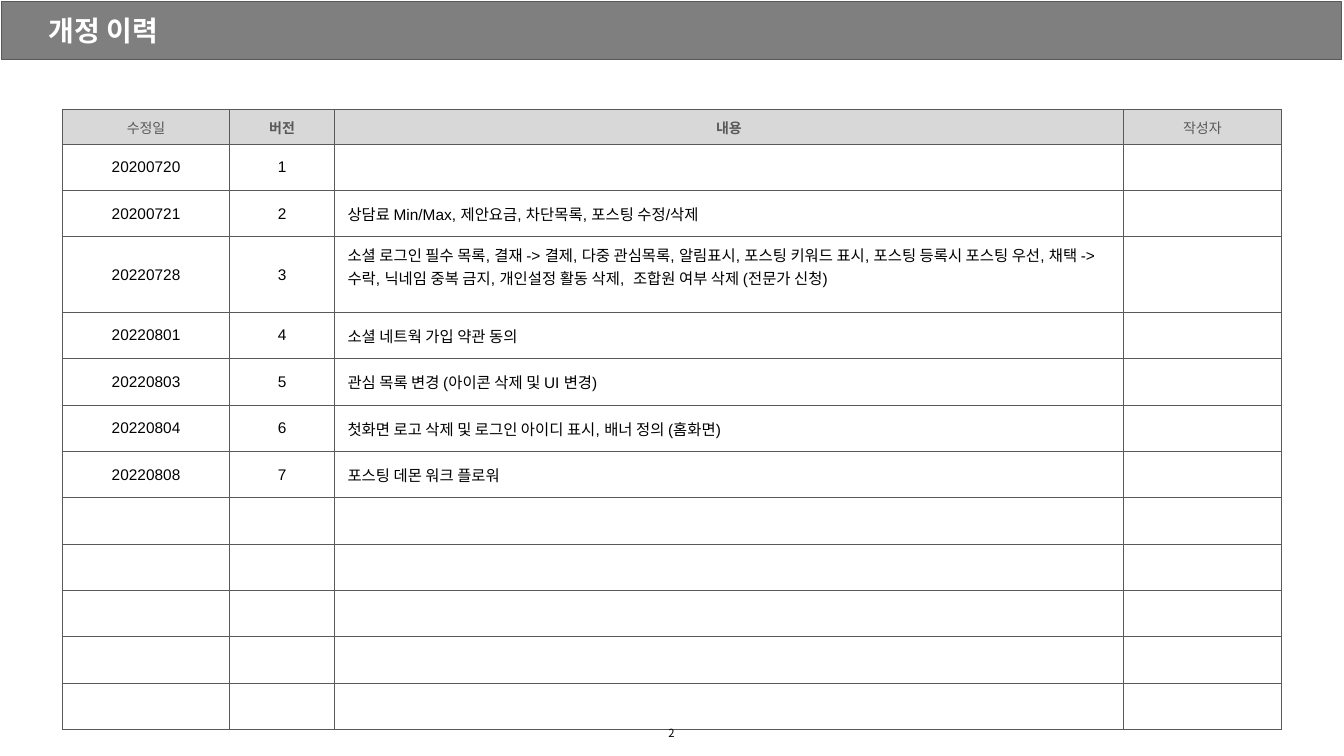
from lxml.etree import SubElement
from pptx import Presentation
from pptx.dml.color import RGBColor
from pptx.enum.shapes import MSO_SHAPE as Shape
from pptx.enum.text import MSO_ANCHOR as Anchor, MSO_AUTO_SIZE as AutoSize, PP_ALIGN as Align
from pptx.oxml.ns import qn
from pptx.util import Inches, Pt

LATIN, KOREAN = "Arial", "Noto Sans CJK KR"
GREY, DARK, LIGHT = "7F7F7F", "595959", "D8D8D8"
BLACK, WHITE = "000000", "FFFFFF"

HEADERS = [("수정일", False), ("버전", True), ("내용", True), ("작성자", False)]
REVISIONS = [
    ("20200720", ""),
    ("20200721", "상담료 Min/Max, 제안요금, 차단목록, 포스팅 수정/삭제"),
    ("20220728", "소셜 로그인 필수 목록, 결재 -> 결제, 다중 관심목록, 알림표시, "
                 "포스팅 키워드 표시, 포스팅 등록시 포스팅 우선, 채택 -> 수락, "
                 "닉네임 중복 금지, 개인설정 활동 삭제,  조합원 여부 삭제 (전문가 신청)"),
    ("20220801", "소셜 네트웍 가입 약관 동의"),
    ("20220803", "관심 목록 변경 (아이콘 삭제 및 UI 변경)"),
    ("20220804", "첫화면 로고 삭제 및 로그인 아이디 표시, 배너 정의 (홈화면)"),
    ("20220808", "포스팅 데몬 워크 플로워"),
]
EMPTY_ROWS = 5
LONG_ROW = 3
COLUMN_WIDTHS = [1.66, 1.04, 7.83, 1.57]
HEADER_HEIGHT, ROW_HEIGHT, LONG_HEIGHT = 0.32, 0.46, 0.75


def color(value):
    return RGBColor.from_string(value)


class SlideBuilder:
    def __init__(self, slide):
        self.slide = slide

    def add_run(self, paragraph, text, size, ink, bold=False, latin=KOREAN):
        run = paragraph.add_run()
        run.text = text
        font = run.font
        font.size, font.bold, font.name = Pt(size), bold, latin
        font.color.rgb = color(ink)
        SubElement(run._r.get_or_add_rPr(), qn("a:ea"), typeface=KOREAN)

    def banner(self, left, top, width, height):
        shape = self.slide.shapes.add_shape(
            Shape.RECTANGLE, Inches(left), Inches(top), Inches(width), Inches(height))
        shape.shadow.inherit = False
        shape.fill.solid()
        shape.fill.fore_color.rgb = color(GREY)
        shape.line.color.rgb = color(DARK)
        shape.line.width = Pt(0.75)
        # The banner lies behind the title
        self.slide.shapes.title.element.addprevious(shape.element)

    def text(self, shape, box, text, size, ink, align, insets, bold=False):
        shape.left, shape.top, shape.width, shape.height = map(Inches, box)
        frame = shape.text_frame
        frame.word_wrap = True
        frame.auto_size = AutoSize.NONE
        frame.vertical_anchor = Anchor.MIDDLE
        (frame.margin_left, frame.margin_top,
         frame.margin_right, frame.margin_bottom) = map(Inches, insets)
        paragraph = frame.paragraphs[0]
        paragraph.alignment = align
        self.add_run(paragraph, text, size, ink, bold)

    def table(self, left, top, widths, heights):
        frame = self.slide.shapes.add_table(
            len(heights), len(widths), Inches(left), Inches(top),
            Inches(sum(widths)), Inches(sum(heights)))
        table = frame.table
        table.first_row = table.horz_banding = False
        for column, width in zip(table.columns, widths):
            column.width = Inches(width)
        for row, height in zip(table.rows, heights):
            row.height = Inches(height)
        return table

    def cell(self, cell, text, size, ink, fill, align, bold=False, anchor=Anchor.MIDDLE):
        cell.margin_left = cell.margin_right = Inches(0.13)
        cell.margin_top = cell.margin_bottom = Inches(0.07)
        cell.vertical_anchor = anchor
        properties = cell._tc.get_or_add_tcPr()
        for side in ("lnL", "lnR", "lnT", "lnB"):
            border = SubElement(properties, qn(f"a:{side}"), w=str(Pt(0.75)))
            SubElement(SubElement(border, qn("a:solidFill")), qn("a:srgbClr"), val=DARK)
        cell.fill.solid()
        cell.fill.fore_color.rgb = color(fill)
        if text:
            paragraph = cell.text_frame.paragraphs[0]
            paragraph.alignment = align
            self.add_run(paragraph, text, size, ink, bold, LATIN)


def main():
    presentation = Presentation()
    presentation.slide_width, presentation.slide_height = Inches(13.34), Inches(7.5)
    slide = presentation.slides.add_slide(presentation.slide_layouts[5])
    builder = SlideBuilder(slide)

    # Title bar
    builder.banner(0.02, 0.02, 13.3, 0.57)
    builder.text(slide.shapes.title, (0.29, 0, 12.76, 0.6), "개정 이력", 20, WHITE,
                 Align.LEFT, (0.19, 0.06, 0.11, 0.06), bold=True)

    # Revision table
    rows = [(date, str(version), note, "")
            for version, (date, note) in enumerate(REVISIONS, 1)]
    rows += [("",) * len(HEADERS)] * EMPTY_ROWS
    heights = [HEADER_HEIGHT] + [ROW_HEIGHT] * len(rows)
    heights[LONG_ROW] = LONG_HEIGHT
    table = builder.table(0.62, 1.09, COLUMN_WIDTHS, heights)
    for column, (label, bold) in enumerate(HEADERS):
        builder.cell(table.cell(0, column), label, 10, DARK, LIGHT, Align.CENTER, bold)
    for row, values in enumerate(rows, 1):
        for column, value in enumerate(values):
            is_note = column == 2
            builder.cell(table.cell(row, column), value, 11, BLACK, WHITE,
                         Align.LEFT if is_note else Align.CENTER,
                         anchor=Anchor.TOP if is_note and row == LONG_ROW else Anchor.MIDDLE)

    # Page number
    page_box = (0, 7.08, 13.33, 0.39)
    builder.text(slide.shapes.add_textbox(*map(Inches, page_box)), page_box, "2", 8, BLACK,
                 Align.CENTER, (0.1, 0.05, 0.1, 0.05))

    presentation.save("out.pptx")


if __name__ == "__main__":
    main()
